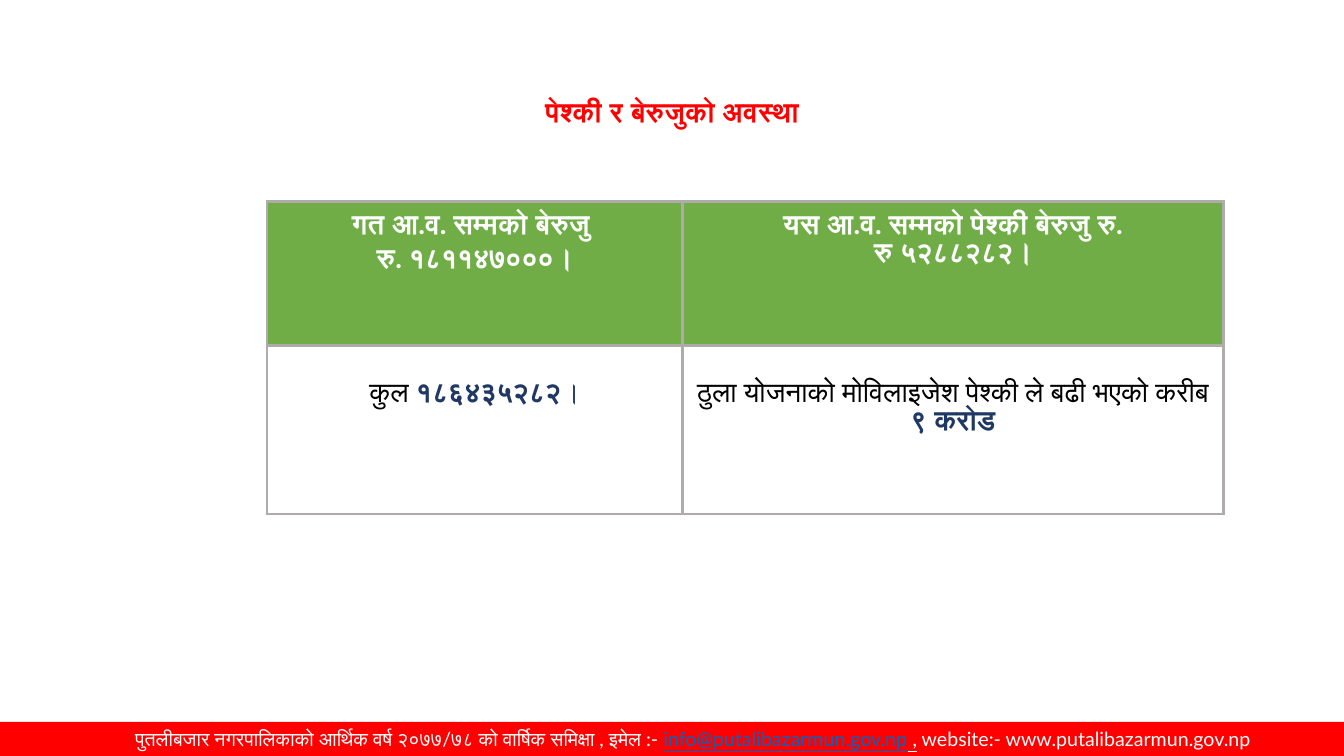
from dataclasses import dataclass

from lxml import etree
from pptx import Presentation
from pptx.dml.color import RGBColor
from pptx.enum.shapes import MSO_SHAPE
from pptx.enum.text import MSO_ANCHOR, PP_ALIGN
from pptx.oxml.ns import qn
from pptx.util import Pt

RECTANGLE = MSO_SHAPE.RECTANGLE
MIDDLE = MSO_ANCHOR.MIDDLE
CENTER = PP_ALIGN.CENTER
TITLE_ONLY = 5
SLIDE_WIDTH, SLIDE_HEIGHT = Pt(960), Pt(540)


@dataclass(frozen=True)
class Theme:
    font: str = "Lato"
    body_size: int = 20
    footer_size: int = 14
    red: str = "FF0000"
    green: str = "70AD47"
    navy: str = "203864"
    link: str = "0563C1"
    border: str = "AFABAB"
    white: str = "FFFFFF"
    black: str = "000000"


THEME = Theme()


def add_run(paragraph, text, color, size=THEME.body_size, bold=False, underline=False):
    run = paragraph.add_run()
    run.text = text
    font = run.font
    font.name = THEME.font
    font.size = Pt(size)
    font.bold = bold
    font.underline = underline
    font.color.rgb = RGBColor.from_string(color)


def add_title(slide, text):
    title = slide.shapes.title
    title.left, title.top, title.width, title.height = Pt(66), Pt(28.75), Pt(828), Pt(104.4)
    title.text_frame.vertical_anchor = MIDDLE
    paragraph = title.text_frame.paragraphs[0]
    paragraph.alignment = CENTER
    paragraph.line_spacing = 0.9
    add_run(paragraph, text, THEME.red, bold=True)


def add_footer(slide):
    height = Pt(24.3)
    bar = slide.shapes.add_shape(RECTANGLE, 0, SLIDE_HEIGHT - height, SLIDE_WIDTH, height)
    bar.shadow.inherit = False
    bar.fill.solid()
    bar.fill.fore_color.rgb = RGBColor.from_string(THEME.red)
    bar.line.fill.background()
    frame = bar.text_frame
    frame.word_wrap = True
    frame.vertical_anchor = MIDDLE
    paragraph = frame.paragraphs[0]
    paragraph.alignment = CENTER
    paragraph_properties = paragraph._p.get_or_add_pPr()
    paragraph_properties.set("marL", str(Pt(30)))
    paragraph_properties.set("indent", "0")
    for text, color, underline in (
        ("पुतलीबजार नगरपालिकाको आर्थिक वर्ष २०७७/७८ को वार्षिक समिक्षा , इमेल :- ", THEME.white, False),
        ("info@putalibazarmun.gov.np", THEME.link, True),
        (" ,", THEME.white, True),
        (" website:- www.putalibazarmun.gov.np", THEME.white, False),
    ):
        add_run(paragraph, text, color, THEME.footer_size, underline=underline)


def set_borders(cell):
    properties = cell._tc.get_or_add_tcPr()
    for side in ("lnL", "lnR", "lnT", "lnB"):
        line = etree.SubElement(properties, qn(f"a:{side}"), w=str(Pt(2.25)))
        fill = etree.SubElement(line, qn("a:solidFill"))
        etree.SubElement(fill, qn("a:srgbClr"), val=THEME.border)


def fill_cell(cell, paragraphs, fill_color, top_margin):
    """Fill a cell; each paragraph is a list of (text, color, bold) runs."""
    set_borders(cell)
    if fill_color:
        cell.fill.solid()
        cell.fill.fore_color.rgb = RGBColor.from_string(fill_color)
    else:
        cell.fill.background()
    cell.margin_top = Pt(top_margin)
    frame = cell.text_frame
    for index, runs in enumerate(paragraphs):
        paragraph = frame.add_paragraph() if index else frame.paragraphs[0]
        paragraph.alignment = CENTER
        for text, color, bold in runs:
            add_run(paragraph, text, color, bold=bold)


def add_arrears_table(slide):
    column_widths, row_heights = (296.6, 386.6), (103, 120.2)
    table = slide.shapes.add_table(
        2, 2, Pt(190.8), Pt(144), Pt(sum(column_widths)), Pt(sum(row_heights))
    ).table
    table.first_row = table.horz_banding = False
    for column, width in zip(table.columns, column_widths):
        column.width = Pt(width)
    for row, height in zip(table.rows, row_heights):
        row.height = Pt(height)

    headers = (
        ("गत आ.व. सम्मको बेरुजु ", "रु. १८११४७०००।"),
        ("यस आ.व. सम्मको पेश्की बेरुजु रु.", "रु ५२८८२८२।"),
    )
    details = (
        [("कुल ", THEME.black, False), ("१८६४३५२८२", THEME.navy, True), ("।", THEME.navy, False)],
        [("ठुला योजनाको मोविलाइजेश पेश्की ले बढी भएको करीब ", THEME.black, False),
         ("९ करोड", THEME.navy, True)],
    )
    for column, (header, detail) in enumerate(zip(headers, details)):
        header_paragraphs = [[(text, THEME.white, True)] for text in header]
        fill_cell(table.cell(0, column), header_paragraphs, THEME.green, top_margin=3.6)
        fill_cell(table.cell(1, column), [detail], None, top_margin=24.5)


def main():
    presentation = Presentation()
    presentation.slide_width, presentation.slide_height = SLIDE_WIDTH, SLIDE_HEIGHT
    slide = presentation.slides.add_slide(presentation.slide_layouts[TITLE_ONLY])
    add_footer(slide)
    add_title(slide, "पेश्की र बेरुजुको अवस्था")
    add_arrears_table(slide)
    presentation.save("out.pptx")


if __name__ == "__main__":
    main()
